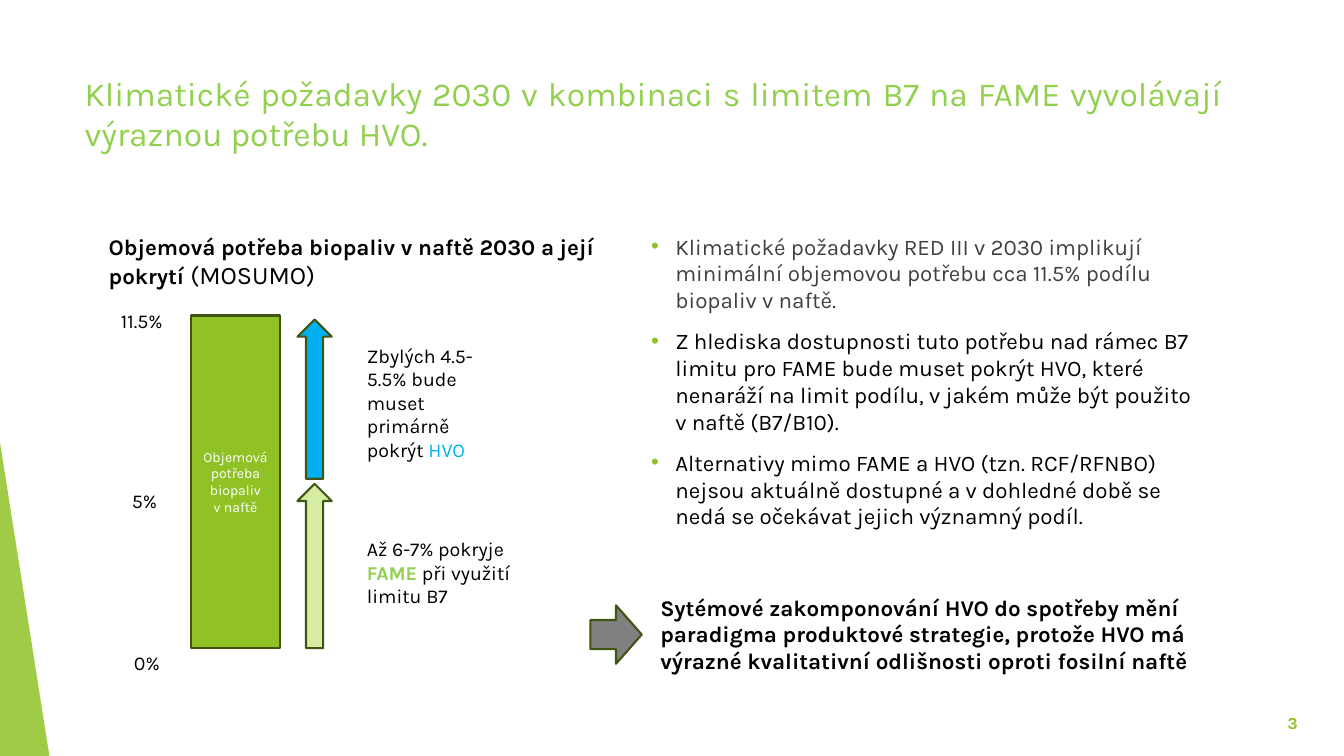
"""Build the slide on the HVO demand created by 2030 climate targets."""
from dataclasses import dataclass, field

from lxml import etree
from pptx import Presentation
from pptx.dml.color import RGBColor
from pptx.enum.shapes import MSO_SHAPE
from pptx.enum.text import MSO_ANCHOR, PP_ALIGN
from pptx.oxml.ns import qn
from pptx.util import Inches, Pt

FONT = "Karla"
BLACK = RGBColor(0x00, 0x00, 0x00)
WHITE = RGBColor(0xFF, 0xFF, 0xFF)
DARK_GREY = RGBColor(0x40, 0x40, 0x40)
GREY = RGBColor(0x80, 0x80, 0x80)
GREEN = RGBColor(0x90, 0xC2, 0x26)
LIME = RGBColor(0x92, 0xD0, 0x50)
PALE_GREEN = RGBColor(0xD5, 0xED, 0xA2)
OLIVE = RGBColor(0x3F, 0x55, 0x11)
BLUE = RGBColor(0x00, 0xB0, 0xF0)

RECT, DOWN_ARROW = MSO_SHAPE.RECTANGLE, MSO_SHAPE.DOWN_ARROW
TRIANGLE = MSO_SHAPE.ISOSCELES_TRIANGLE
LEFT, CENTER, RIGHT, JUSTIFY = PP_ALIGN.LEFT, PP_ALIGN.CENTER, PP_ALIGN.RIGHT, PP_ALIGN.JUSTIFY
TOP, MIDDLE = MSO_ANCHOR.TOP, MSO_ANCHOR.MIDDLE

Box = tuple[float, float, float, float]


@dataclass
class Run:
    text: str
    size: float = 14
    color: RGBColor = BLACK
    bold: bool = False


@dataclass
class Text:
    box: Box
    paragraphs: list[list[Run]]
    align: PP_ALIGN = LEFT
    anchor: MSO_ANCHOR = TOP
    bullet: bool = False


@dataclass
class Block:
    kind: MSO_SHAPE
    box: Box
    fill: RGBColor
    rotation: float = 0
    outlined: bool = True
    paragraphs: list[list[Run]] = field(default_factory=list)


BLOCKS = [
    Block(TRIANGLE, (0, 4.39, 0.49, 3.11), GREEN, outlined=False),
    Block(RECT, (1.89, 3.13, 0.89, 3.3), GREEN, paragraphs=[
        [Run("Objemová potřeba biopaliv", 10, WHITE)], [Run("v naftě", 10, WHITE)]]),
    Block(DOWN_ARROW, (2.95, 3.17, 0.34, 1.58), BLUE, 180),
    Block(DOWN_ARROW, (2.95, 4.8, 0.34, 1.63), PALE_GREEN, 180),
    Block(DOWN_ARROW, (5.82, 6.04, 0.58, 0.51), GREY, 270),
]

TEXTS = [
    Text((0.74, 0.67, 11.48, 0.82), [[Run(
        "Klimatické požadavky 2030 v kombinaci s limitem B7 na FAME vyvolávají "
        "výraznou potřebu HVO.", 24, LIME)]], JUSTIFY),
    Text((12.22, 6.97, 0.75, 0.4), [[Run("3", 12, GREEN, True)]], RIGHT, MIDDLE),
    Text((6.36, 2.26, 5.69, 4.56), [
        [Run("Klimatické požadavky RED III v 2030 implikují minimální objemovou potřebu "
             "cca 11.5% podílu biopaliv v naftě.", 16, DARK_GREY)],
        [Run("Z hlediska dostupnosti tuto potřebu nad rámec B7 limitu pro FAME bude muset "
             "pokrýt HVO, které nenaráží na limit podílu, v jakém může být použito "
             "v naftě (B7/B10).", 16)],
        [Run("Alternativy mimo FAME a HVO (tzn. RCF/RFNBO) nejsou aktuálně dostupné a "
             "v dohledné době se nedá se očekávat jejich významný podíl.", 16)],
    ], bullet=True),
    Text((0.98, 2.26, 5.61, 0.67), [[
        Run("Objemová potřeba biopaliv v naftě 2030 a její pokrytí", 16, bold=True),
        Run(" (MOSUMO)", 18)]]),
    Text((1.1, 3.02, 0.72, 0.34), [[Run("11.5%")]]),
    Text((1.21, 4.8, 0.58, 0.34), [[Run("5%")]]),
    Text((1.23, 6.41, 0.58, 0.34), [[Run("0%")]]),
    Text((3.54, 3.36, 1.53, 1.28), [[
        Run("Zbylých 4.5-5.5% bude muset primárně pokrýt "), Run("HVO", color=BLUE)]]),
    Text((3.54, 5.28, 2.04, 0.81), [[
        Run("Až 6-7% pokryje "), Run("FAME", color=LIME, bold=True),
        Run(" při využití limitu B7")]]),
    Text((6.45, 5.84, 5.61, 0.91), [[Run(
        "Sytémové zakomponování HVO do spotřeby mění paradigma produktové strategie, "
        "protože HVO má výrazné kvalitativní odlišnosti oproti fosilní naftě",
        16, bold=True)]]),
]


def add_bullet(p) -> None:
    p.space_before = Pt(10)
    pPr = p._p.get_or_add_pPr()
    pPr.set("marL", str(Inches(0.24)))
    pPr.set("indent", str(Inches(-0.24)))
    color = etree.SubElement(pPr, qn("a:buClr"))
    etree.SubElement(color, qn("a:srgbClr"), val=str(GREEN))
    etree.SubElement(pPr, qn("a:buFont"), typeface="Arial")
    etree.SubElement(pPr, qn("a:buChar"), char="•")


def fill_text(tf, paragraphs: list[list[Run]], align: PP_ALIGN, anchor: MSO_ANCHOR,
              bullet: bool = False) -> None:
    for name, value in {"word_wrap": True, "vertical_anchor": anchor}.items():
        setattr(tf, name, value)
    for i, runs in enumerate(paragraphs):
        p = tf.add_paragraph() if i else tf.paragraphs[0]
        p.alignment = align
        if bullet:
            add_bullet(p)
        for run in runs:
            r = p.add_run()
            r.text = run.text
            formats = {"name": FONT, "size": Pt(run.size), "bold": run.bold}
            for name, value in formats.items():
                setattr(r.font, name, value)
            r.font.color.rgb = run.color


def add_block(slide, block: Block) -> None:
    sp = slide.shapes.add_shape(block.kind, *map(Inches, block.box))
    sp.shadow.inherit = False
    sp.rotation = block.rotation
    sp.fill.solid()
    sp.fill.fore_color.rgb = block.fill
    if block.outlined:
        sp.line.color.rgb = OLIVE
        sp.line.width = Pt(1.5)
    else:
        sp.line.fill.background()
    if block.kind == TRIANGLE:
        sp.adjustments[0] = 0
        color = sp.fill._xPr.find(qn("a:solidFill"))[0]
        etree.SubElement(color, qn("a:alpha"), val="85000")
    if block.paragraphs:
        fill_text(sp.text_frame, block.paragraphs, CENTER, MIDDLE)


def add_text(slide, text: Text) -> None:
    sp = slide.shapes.add_textbox(*map(Inches, text.box))
    fill_text(sp.text_frame, text.paragraphs, text.align, text.anchor, text.bullet)


def main() -> None:
    prs = Presentation()
    prs.slide_width, prs.slide_height = Inches(13.33), Inches(7.5)
    slide = prs.slides.add_slide(prs.slide_layouts[6])
    for block in BLOCKS:
        add_block(slide, block)
    for text in TEXTS:
        add_text(slide, text)
    prs.save("out.pptx")


if __name__ == "__main__":
    main()
